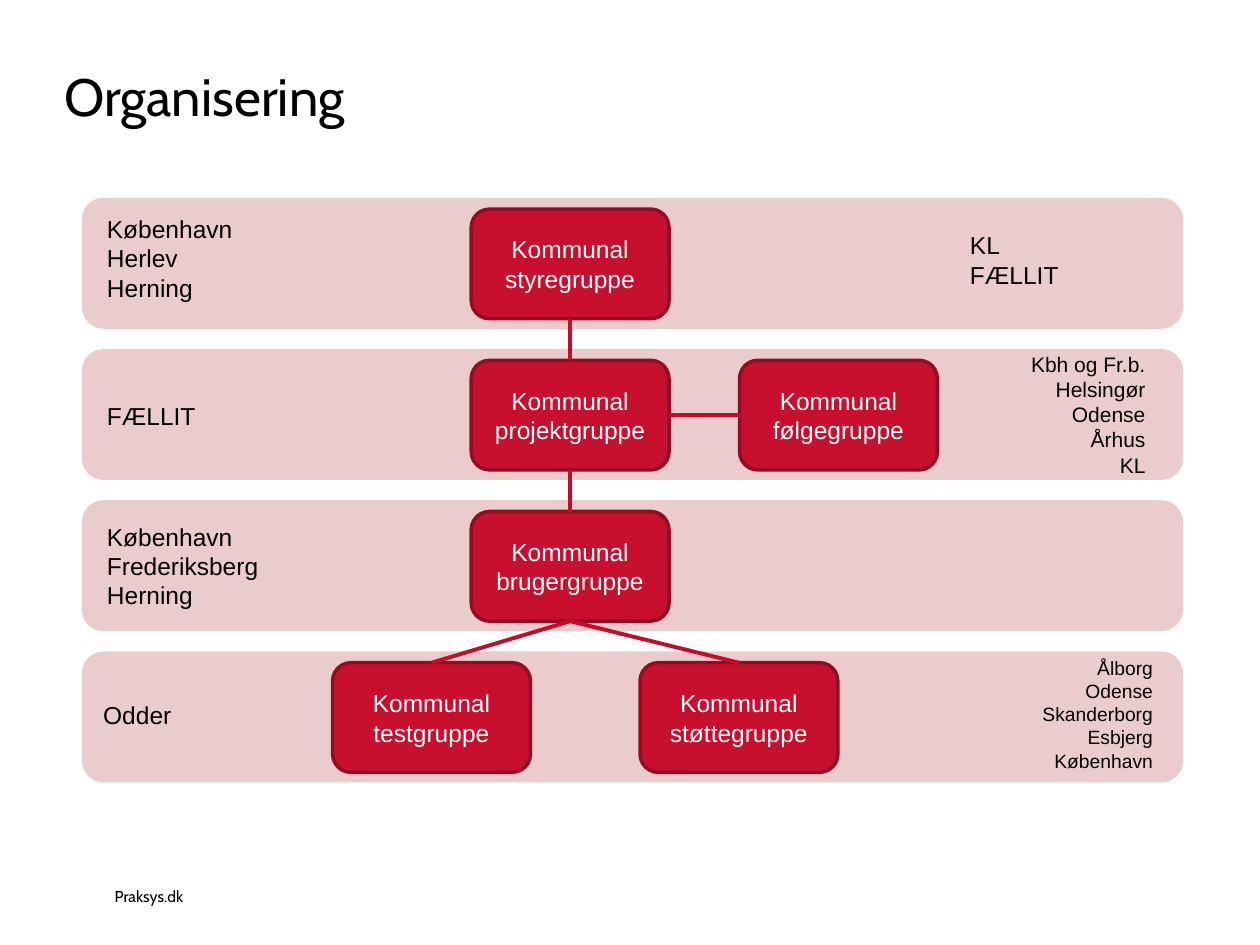
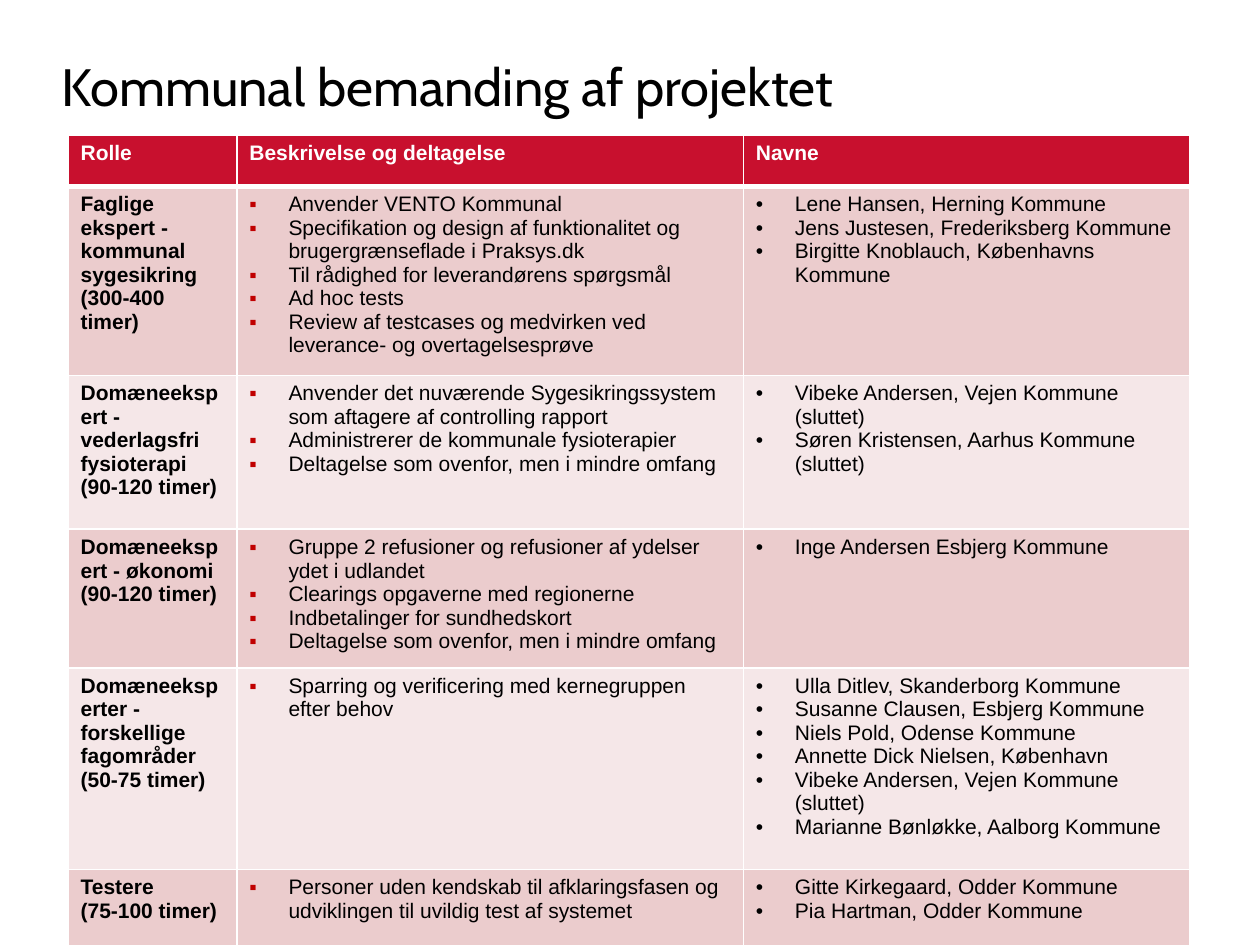
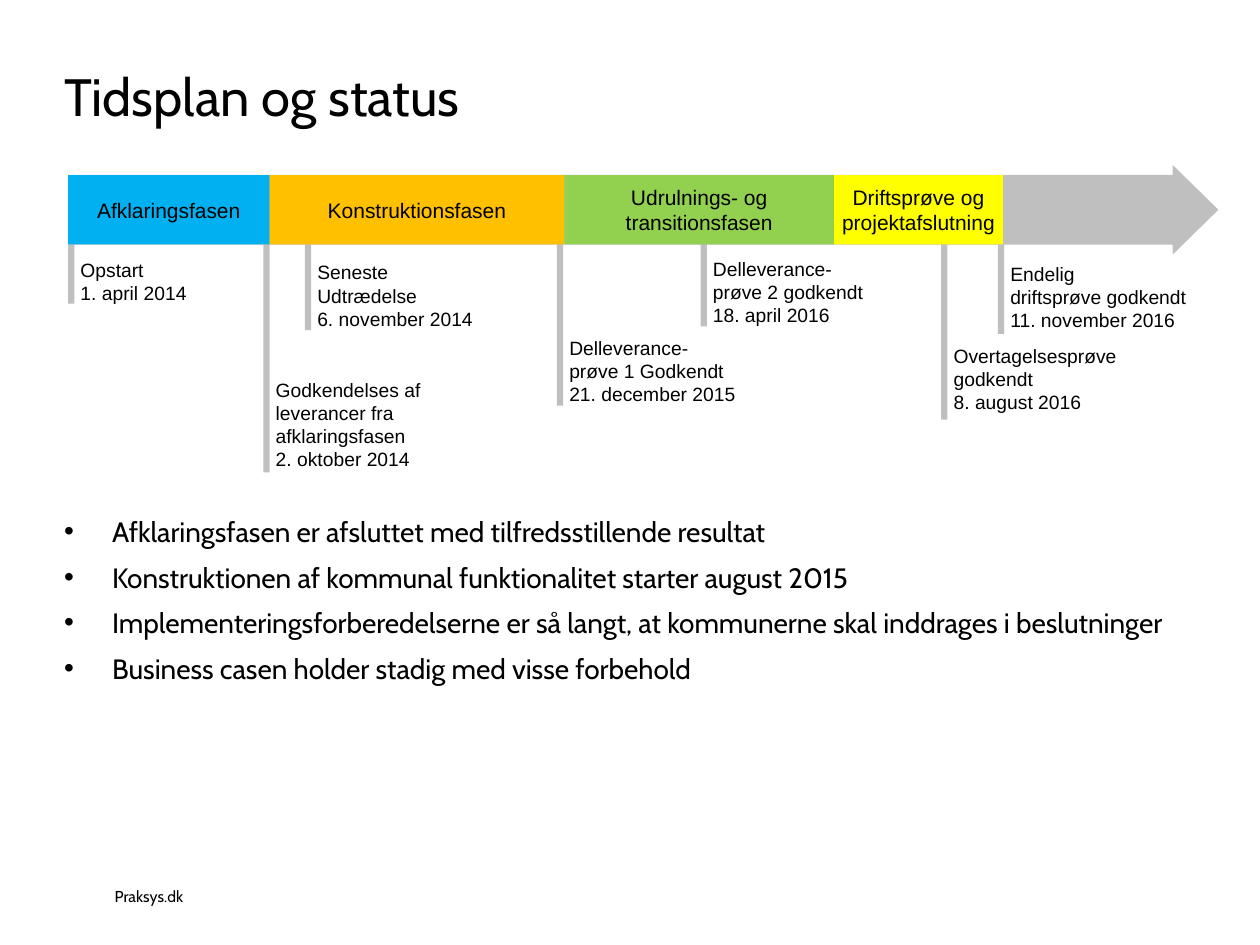
from collections import namedtuple
from dataclasses import dataclass

from lxml import etree
from pptx import Presentation
from pptx.dml.color import RGBColor
from pptx.enum.shapes import MSO_CONNECTOR, MSO_SHAPE
from pptx.enum.text import MSO_ANCHOR, PP_ALIGN
from pptx.oxml.ns import qn
from pptx.util import Inches, Pt

RECTANGLE, ROUNDED, ARROW = MSO_SHAPE.RECTANGLE, MSO_SHAPE.ROUNDED_RECTANGLE, MSO_SHAPE.RIGHT_ARROW
STRAIGHT = MSO_CONNECTOR.STRAIGHT
TOP, MIDDLE, BOTTOM = MSO_ANCHOR.TOP, MSO_ANCHOR.MIDDLE, MSO_ANCHOR.BOTTOM
LEFT, CENTER, RIGHT = PP_ALIGN.LEFT, PP_ALIGN.CENTER, PP_ALIGN.RIGHT
SITE_TOP, SITE_LEFT, SITE_BOTTOM, SITE_RIGHT = range(4)

SLIDE_WIDTH, SLIDE_HEIGHT = Inches(10), Inches(7.5)
COLUMNS, ROWS = 100, 75
COLUMN, ROW = SLIDE_WIDTH / COLUMNS, SLIDE_HEIGHT / ROWS


@dataclass(frozen=True)
class Theme:
    heading: str = "Cabin"
    body: str = "Arial"
    black: str = "000000"
    white: str = "FFFFFF"
    red: str = "C8102E"
    dark_red: str = "940C22"
    link_red: str = "C80B2A"
    bullet_red: str = "C00000"
    rose: str = "EBCCCD"
    pale_rose: str = "F5E7E8"
    grey: str = "BFBFBF"
    title_size: int = 30
    bullet_size: int = 16
    group_size: int = 14
    table_size: int = 12
    label_size: int = 11
    footer_size: int = 9
    leading: float = 1.2


THEME = Theme()


class Box(namedtuple("Box", "left top width height")):
    """A region in grid columns and rows."""

    def inner(self, left, top, width, height):
        return Box(self.left + left, self.top + top, width, height)

    def lengths(self):
        units = (COLUMN, ROW, COLUMN, ROW)
        return [round(value * unit) for value, unit in zip(self, units)]


TITLE_BOX = Box(5.1, 6.3, 89.4, 9.2)
HIGH_TITLE_BOX = Box(4.9, 5.5, 90, 7.9)
FOOTER_BOX = Box(9.1, 68, 10.2, 3.9)
BANDS_BOX = Box(6.5, 15.7, 87.4, 46.4)
STAFFING_BOX = Box(5.4, 10.7, 89, 63.1)
TIMELINE_BOX = Box(5.4, 13.1, 91.3, 7.1)
STATUS_BOX = Box(5.1, 39.9, 89.4, 22.3)

BAND_PITCH, BAND_HEIGHT = 12, 10.4
GROUP_TOP, GROUP_WIDTH, GROUP_HEIGHT = 0.9, 15.7, 8.7
GROUPS = {  # name: (left, band)
    "styregruppe": (30.9, 0),
    "projektgruppe": (30.9, 1),
    "følgegruppe": (52.2, 1),
    "brugergruppe": (30.9, 2),
    "støttegruppe": (44.3, 3),
    "testgruppe": (19.9, 3),
}
LINKS = [
    ("styregruppe", SITE_BOTTOM, "projektgruppe", SITE_TOP),
    ("følgegruppe", SITE_LEFT, "projektgruppe", SITE_RIGHT),
    ("projektgruppe", SITE_BOTTOM, "brugergruppe", SITE_TOP),
    ("brugergruppe", SITE_BOTTOM, "testgruppe", SITE_TOP),
    ("brugergruppe", SITE_BOTTOM, "støttegruppe", SITE_TOP),
]
MEMBERS = [  # band, left, top in band, width, size, alignment, names
    (0, 1, 0.8, 20.5, THEME.group_size, LEFT, ["København", "Herlev", "Herning"]),
    (0, 69.5, 2.1, 15, THEME.group_size, LEFT, ["KL", "FÆLLIT"]),
    (1, 1, 3.6, 20.5, THEME.group_size, LEFT, ["FÆLLIT"]),
    (1, 68.1, -0.3, 17.3, THEME.table_size, RIGHT,
     ["Kbh og Fr.b.", "Helsingør", "Odense", "Århus", "KL"]),
    (2, 1, 1.2, 20.5, THEME.group_size, LEFT, ["København", "Frederiksberg", "Herning"]),
    (3, 0.7, 3.4, 20.5, THEME.group_size, LEFT, ["Odder"]),
    (3, 68.7, -0.1, 17.3, THEME.label_size, RIGHT,
     ["Ålborg", "Odense", "Skanderborg", "Esbjerg", "København"]),
]

STAFFING_COLUMNS = [13.4, 40.2, 35.4]
STAFFING_HEADINGS = ["Rolle", "Beskrivelse og deltagelse", "Navne"]
HEADING_HEIGHT = 4.1
STAFFING = [  # row height, role, description, names
    (14,
     ["Faglige ekspert - kommunal sygesikring", "(300-400 timer)"],
     ["Anvender VENTO Kommunal",
      "Specifikation og design af funktionalitet og brugergrænseflade i Praksys.dk",
      "Til rådighed for leverandørens spørgsmål",
      "Ad hoc tests",
      "Review af testcases og medvirken ved leverance- og overtagelsesprøve"],
     ["Lene Hansen, Herning Kommune",
      "Jens Justesen, Frederiksberg Kommune",
      "Birgitte Knoblauch, Københavns Kommune"]),
    (12.2,
     ["Domæneekspert - vederlagsfri fysioterapi", "(90-120 timer)"],
     ["Anvender det nuværende Sygesikringssystem som aftagere af controlling rapport",
      "Administrerer de kommunale fysioterapier",
      "Deltagelse som ovenfor, men i mindre omfang"],
     ["Vibeke Andersen, Vejen Kommune (sluttet)",
      "Søren Kristensen, Aarhus Kommune (sluttet)"]),
    (10.3,
     ["Domæneekspert - økonomi", "(90-120 timer)"],
     ["Gruppe 2 refusioner og refusioner af ydelser ydet i udlandet",
      "Clearings opgaverne med regionerne",
      "Indbetalinger for sundhedskort",
      "Deltagelse som ovenfor, men i mindre omfang"],
     ["Inge Andersen Esbjerg Kommune"]),
    (16,
     ["Domæneeksperter - forskellige fagområder", "(50-75 timer)"],
     ["Sparring og verificering med kernegruppen efter behov"],
     ["Ulla Ditlev, Skanderborg Kommune",
      "Susanne Clausen, Esbjerg Kommune",
      "Niels Pold, Odense Kommune",
      "Annette Dick Nielsen, København",
      "Vibeke Andersen, Vejen Kommune (sluttet)",
      "Marianne Bønløkke, Aalborg Kommune"]),
    (6.5,
     ["Testere", "(75-100 timer)"],
     ["Personer uden kendskab til afklaringsfasen og udviklingen til uvildig test af systemet"],
     ["Gitte Kirkegaard, Odder Kommune", "Pia Hartman, Odder Kommune"]),
]

PHASE_TOP, PHASE_HEIGHT = 0.8, 5.5
PHASES = [  # name, width, colour
    ("Afklaringsfasen", 16, "00B0F0"),
    ("Konstruktionsfasen", 23.4, "FFC000"),
    ("Udrulnings- og transitionsfasen", 21.4, "92D050"),
    ("Driftsprøve og projektafslutning", 13.4, "FFFF00"),
]
MARKER_WIDTH, MILESTONE_WIDTH = 0.5, 18.7
MILESTONES = [  # left, marker bottom, label top, lines
    (0, 11, 6.9, ["Opstart", "1. april 2014"]),
    (15.5, 24.4, 16.4,
     ["Godkendelses af", "leverancer fra", "afklaringsfasen", "2. oktober 2014"]),
    (18.8, 13.1, 7.1, ["Seneste", "Udtrædelse", "6. november 2014"]),
    (38.8, 19.1, 13.1, ["Delleverance-", "prøve 1 Godkendt", "21. december 2015"]),
    (50.2, 12.8, 6.8, ["Delleverance-", "prøve 2 godkendt", "18. april 2016"]),
    (69.3, 20.2, 13.7, ["Overtagelsesprøve godkendt", "8. august 2016"]),
    (73.8, 13.4, 7.2, ["Endelig", "driftsprøve godkendt", "11. november 2016"]),
]
STATUS = [
    "Afklaringsfasen er afsluttet med tilfredsstillende resultat",
    "Konstruktionen af kommunal funktionalitet starter august 2015",
    "Implementeringsforberedelserne er så langt, at kommunerne skal inddrages i beslutninger",
    "Business casen holder stadig med visse forbehold",
]


def set_all(target, values):
    for name, value in values.items():
        setattr(target, name, value)


def add_bullet(paragraph, character, indent, color=None):
    properties = paragraph._p.get_or_add_pPr()
    properties.set("marL", str(Inches(indent)))
    properties.set("indent", str(-Inches(indent)))
    if color:
        bullet_color = etree.SubElement(properties, qn("a:buClr"))
        etree.SubElement(bullet_color, qn("a:srgbClr"), val=color)
    etree.SubElement(properties, qn("a:buFont"), typeface=THEME.body)
    etree.SubElement(properties, qn("a:buChar"), char=character)


def write(frame, lines, size, font=THEME.body, color=THEME.black, bold=False,
          align=LEFT, leading=None, bullet=None):
    """Fill a text frame, one paragraph for each line; leading is in points."""
    for number, line in enumerate(lines):
        paragraph = frame.paragraphs[0] if number == 0 else frame.add_paragraph()
        set_all(paragraph, {"text": line, "alignment": align})
        if leading:
            paragraph.line_spacing = Pt(leading)
        if bullet:
            add_bullet(paragraph, *bullet)
        set_all(paragraph.font, {"name": font, "size": Pt(size), "bold": bold})
        paragraph.font.color.rgb = RGBColor.from_string(color)


def set_frame(frame, anchor, inset):
    set_all(frame, {"word_wrap": True, "vertical_anchor": anchor})
    if not inset:
        set_all(frame, dict.fromkeys(
            ("margin_left", "margin_top", "margin_right", "margin_bottom"), 0))


def add_text(slide, box, lines, size, anchor=TOP, inset=True, **format_values):
    frame = slide.shapes.add_textbox(*box.lengths()).text_frame
    set_frame(frame, anchor, inset)
    format_values.setdefault("leading", round(size * THEME.leading, 1))
    write(frame, lines, size, **format_values)


def add_block(slide, box, kind, fill, line=None):
    shape = slide.shapes.add_shape(kind, *box.lengths())
    shape.shadow.inherit = False
    shape.fill.solid()
    shape.fill.fore_color.rgb = RGBColor.from_string(fill)
    if line:
        shape.line.color.rgb = RGBColor.from_string(line)
        shape.line.width = Pt(2)
    else:
        shape.line.fill.background()
    return shape


def label_block(shape, text, size, color, inset=True):
    set_frame(shape.text_frame, MIDDLE, inset)
    write(shape.text_frame, [text], size, color=color, align=CENTER,
          leading=round(size * THEME.leading, 1))


def add_link(slide, start, start_site, end, end_site):
    connector = slide.shapes.add_connector(STRAIGHT, 0, 0, 0, 0)
    connector.begin_connect(start, start_site)
    connector.end_connect(end, end_site)
    connector.line.color.rgb = RGBColor.from_string(THEME.link_red)
    connector.line.width = Pt(2.25)
    etree.SubElement(connector._element.spPr, qn("a:effectLst"))


def add_slide(presentation, title, title_box=TITLE_BOX, footer=True):
    slide = presentation.slides.add_slide(presentation.slide_layouts[6])
    add_text(slide, title_box, [title], THEME.title_size, inset=False,
             font=THEME.heading, leading=27)
    if footer:
        add_text(slide, FOOTER_BOX, ["Praksys.dk"], THEME.footer_size, anchor=BOTTOM,
                 inset=False, font=THEME.heading, leading=13)
    return slide


def draw_organisation(slide, box):
    bands = [box.inner(0, number * BAND_PITCH, box.width, BAND_HEIGHT) for number in range(4)]
    for band in bands:
        add_block(slide, band, ROUNDED, THEME.rose)
    groups = {}
    for name, (left, band) in GROUPS.items():
        place = bands[band].inner(left, GROUP_TOP, GROUP_WIDTH, GROUP_HEIGHT)
        groups[name] = add_block(slide, place, ROUNDED, THEME.red, THEME.dark_red)
        label_block(groups[name], f"Kommunal {name}", THEME.group_size, THEME.white)
    for start, start_site, end, end_site in LINKS:
        add_link(slide, groups[start], start_site, groups[end], end_site)
    for band, left, top, width, size, align, names in MEMBERS:
        place = bands[band].inner(left, top, width, BAND_HEIGHT - top)
        add_text(slide, place, names, size, align=align)


def set_borders(cell, bottom):
    properties = cell._tc.get_or_add_tcPr()
    for position, (side, width) in enumerate(
            {"lnL": 1, "lnR": 1, "lnT": 1, "lnB": bottom}.items()):
        line = etree.Element(qn(f"a:{side}"), w=str(Pt(width)))
        fill = etree.SubElement(line, qn("a:solidFill"))
        etree.SubElement(fill, qn("a:srgbClr"), val=THEME.white)
        properties.insert(position, line)


def fill_cell(cell, lines, fill, bottom=1, **format_values):
    cell.fill.solid()
    cell.fill.fore_color.rgb = RGBColor.from_string(fill)
    set_borders(cell, bottom)
    write(cell.text_frame, lines, THEME.table_size, **format_values)


def draw_staffing(slide, box):
    table = slide.shapes.add_table(
        len(STAFFING) + 1, len(STAFFING_COLUMNS), *box.lengths()).table
    for column, width in zip(table.columns, STAFFING_COLUMNS):
        column.width = round(width * COLUMN)
    heights = [HEADING_HEIGHT] + [height for height, *_ in STAFFING]
    for row, height in zip(table.rows, heights):
        row.height = round(height * ROW)
    for number, heading in enumerate(STAFFING_HEADINGS):
        fill_cell(table.cell(0, number), [heading], THEME.red, bottom=3,
                  color=THEME.white, bold=True)
    formats = [{"bold": True},
               {"bullet": ("▪", 0.31, THEME.bullet_red)},
               {"bullet": ("•", 0.31)}]
    for row, (_, *texts) in enumerate(STAFFING, start=1):
        fill = THEME.rose if row % 2 else THEME.pale_rose
        for column, (lines, format_values) in enumerate(zip(texts, formats)):
            fill_cell(table.cell(row, column), lines, fill, **format_values)


def draw_timeline(slide, box):
    for left, bottom, _, _ in MILESTONES:
        marker = box.inner(left, PHASE_TOP, MARKER_WIDTH, bottom - PHASE_TOP)
        add_block(slide, marker, RECTANGLE, THEME.grey)
    arrow = add_block(slide, box, ARROW, THEME.grey)
    arrow.adjustments[0], arrow.adjustments[1] = 0.78, 0.51
    left = 0
    for name, width, color in PHASES:
        phase = add_block(slide, box.inner(left, PHASE_TOP, width, PHASE_HEIGHT),
                          RECTANGLE, color)
        label_block(phase, name, THEME.table_size, THEME.black, inset=False)
        left += width
    for left, bottom, top, lines in MILESTONES:
        label = box.inner(left, top, MILESTONE_WIDTH, bottom - top)
        add_text(slide, label, lines, THEME.label_size)


def main():
    presentation = Presentation()
    set_all(presentation, {"slide_width": SLIDE_WIDTH, "slide_height": SLIDE_HEIGHT})

    draw_organisation(add_slide(presentation, "Organisering"), BANDS_BOX)

    staffing = add_slide(presentation, "Kommunal bemanding af projektet",
                         HIGH_TITLE_BOX, footer=False)
    draw_staffing(staffing, STAFFING_BOX)

    status = add_slide(presentation, "Tidsplan og status")
    draw_timeline(status, TIMELINE_BOX)
    add_text(status, STATUS_BOX, STATUS, THEME.bullet_size, inset=False,
             font=THEME.heading, leading=26, bullet=("•", 0.38))

    presentation.save("out.pptx")


if __name__ == "__main__":
    main()
